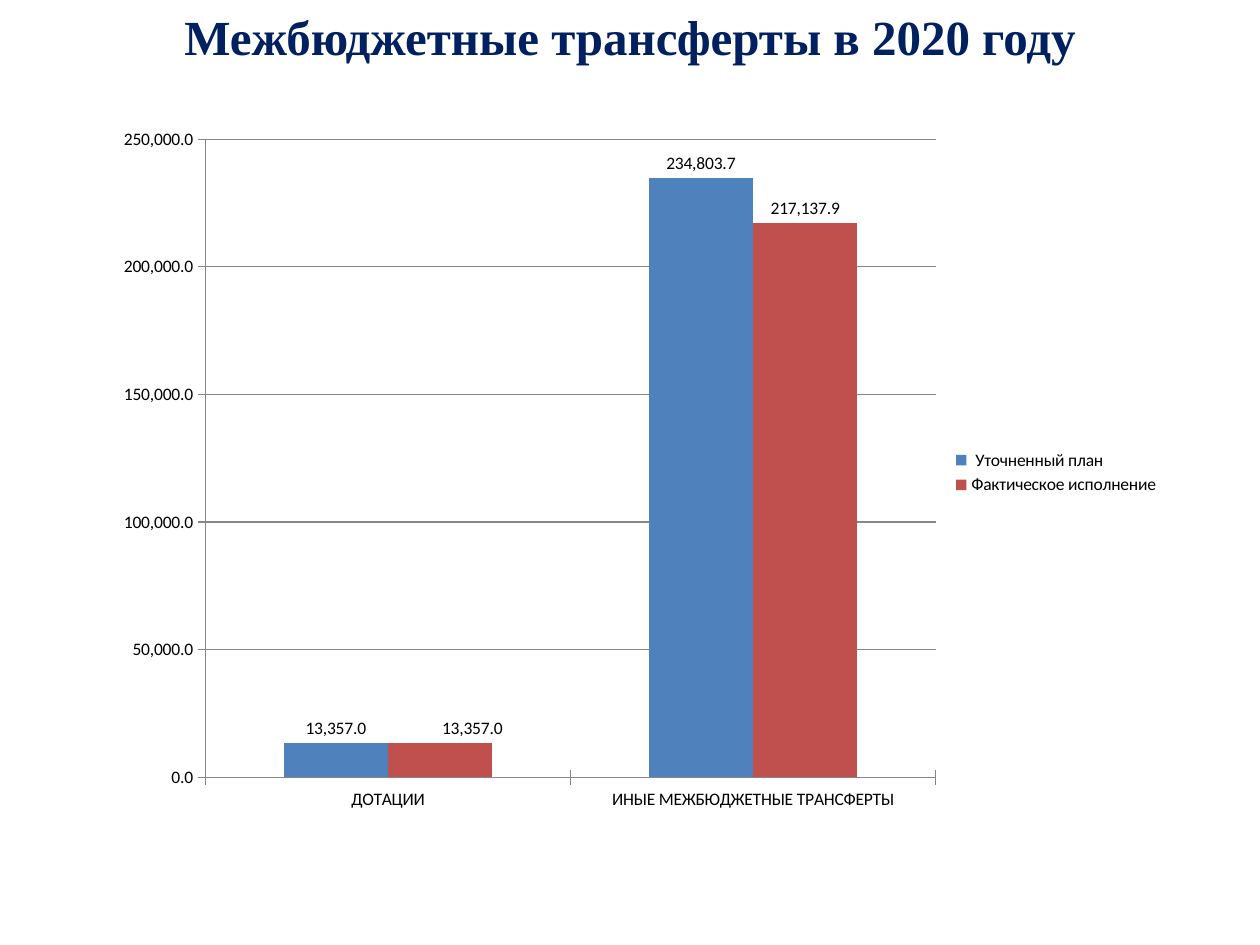
from lxml import etree
from pptx import Presentation
from pptx import util as u
from pptx.chart import data as chart_data
from pptx.dml import color
from pptx.enum import chart as ch, text
from pptx.oxml import ns

COLOURS = {"title": "002060", "plan": "4F81BD", "actual": "C0504D",
           "text": "000000", "line": "868686"}
PX = u.Inches(1) / 126
NUMBER = "#,##0.0"


def px(length):
    return u.Emu(round(length * PX))


def rgb(name):
    return color.RGBColor.from_string(COLOURS[name])


def child(parent, tag, value=None):
    element = etree.SubElement(parent, ns.qn(tag))
    if value is not None:
        element.set("val", str(value))
    return element


def make_layout(**values):
    layout = etree.Element(ns.qn("c:layout"))
    manual = child(layout, "c:manualLayout")
    for name, value in values.items():
        child(manual, f"c:{name}", value)
    return layout


class SlideBuilder:
    def __init__(self, deck):
        self.slide = deck.slides.add_slide(deck.slide_layouts[6])
        self.body_font = "Calibri"
        self.title_font = "Times New Roman"

    def style_font(self, font, name, size, colour, bold=False):
        font.name = name
        font.size = u.Pt(size)
        font.bold = bold
        font.color.rgb = rgb(colour)

    def title(self, wording, left, top, width, height):
        box = self.slide.shapes.add_textbox(px(left), px(top), px(width), px(height))
        frame = box.text_frame
        frame.word_wrap = True
        frame.vertical_anchor = text.MSO_ANCHOR.MIDDLE
        frame.text = wording
        para = frame.paragraphs[0]
        para.alignment = text.PP_ALIGN.CENTER
        self.style_font(para.runs[0].font, self.title_font, 28, "title", True)

    def column_chart(self, categories, series, left, top, width, height):
        data = chart_data.CategoryChartData(number_format=NUMBER)
        data.categories = categories
        for name, values, _ in series:
            data.add_series(name, values)
        chart = self.slide.shapes.add_chart(
            ch.XL_CHART_TYPE.COLUMN_CLUSTERED,
            px(left), px(top), px(width), px(height), data).chart
        self.style_font(chart.font, self.body_font, 10, "text")
        chart.has_title = False
        chart.has_legend = True
        chart.legend.position = ch.XL_LEGEND_POSITION.RIGHT
        chart.legend.include_in_layout = False
        plot = chart.plots[0]
        plot.vary_by_categories = False
        plot.gap_width = 150
        plot.overlap = 0
        for column, (_, _, colour) in zip(plot.series, series):
            column.format.fill.solid()
            column.format.fill.fore_color.rgb = rgb(colour)
            labels = column.data_labels
            labels.show_value = True
            labels.number_format = NUMBER
            labels.number_format_is_linked = False
            labels.position = ch.XL_LABEL_POSITION.OUTSIDE_END
        self.style_axes(chart)
        return chart

    def style_axes(self, chart):
        for axis in (chart.category_axis, chart.value_axis):
            axis.major_tick_mark = ch.XL_TICK_MARK.CROSS
            axis.minor_tick_mark = ch.XL_TICK_MARK.NONE
            axis.format.line.color.rgb = rgb("line")
        value_axis = chart.value_axis
        value_axis.minimum_scale = 0
        value_axis.maximum_scale = 250000
        value_axis.major_unit = 50000
        value_axis.tick_labels.number_format = NUMBER
        value_axis.tick_labels.number_format_is_linked = False
        value_axis.has_major_gridlines = True
        value_axis.major_gridlines.format.line.color.rgb = rgb("line")

    def place_plot(self, chart, x, y, w, h):
        area = chart.plots[0]._element.getparent()
        for old in area.findall(ns.qn("c:layout")):
            area.remove(old)
        area.insert(0, make_layout(layoutTarget="inner", xMode="edge", yMode="edge",
                                   x=x, y=y, w=w, h=h))

    def shift_label(self, column, index, x, y):
        column.points[index].data_label.position = ch.XL_LABEL_POSITION.OUTSIDE_END
        label = column.data_labels._element.find(ns.qn("c:dLbl"))
        number = etree.Element(ns.qn("c:numFmt"), formatCode=NUMBER, sourceLinked="0")
        label.insert(1, make_layout(x=x, y=y))
        label.insert(2, number)


def main():
    deck = Presentation()
    deck.slide_width, deck.slide_height = px(1260), px(945)
    builder = SlideBuilder(deck)
    builder.title("Межбюджетные трансферты в 2020 году", 0, 0, 1260, 72)
    chart = builder.column_chart(
        ["ДОТАЦИИ", "ИНЫЕ МЕЖБЮДЖЕТНЫЕ ТРАНСФЕРТЫ"],
        [(" Уточненный план", (13357, 234803.7), "plan"),
         ("Фактическое исполнение", (13357, 217137.9), "actual")],
        98, 118, 1074, 709)
    builder.place_plot(chart, 0.1, 0.03, 0.68, 0.9)
    builder.shift_label(chart.plots[0].series[1], 0, 0.03, 0)
    deck.save("out.pptx")


if __name__ == "__main__":
    main()
